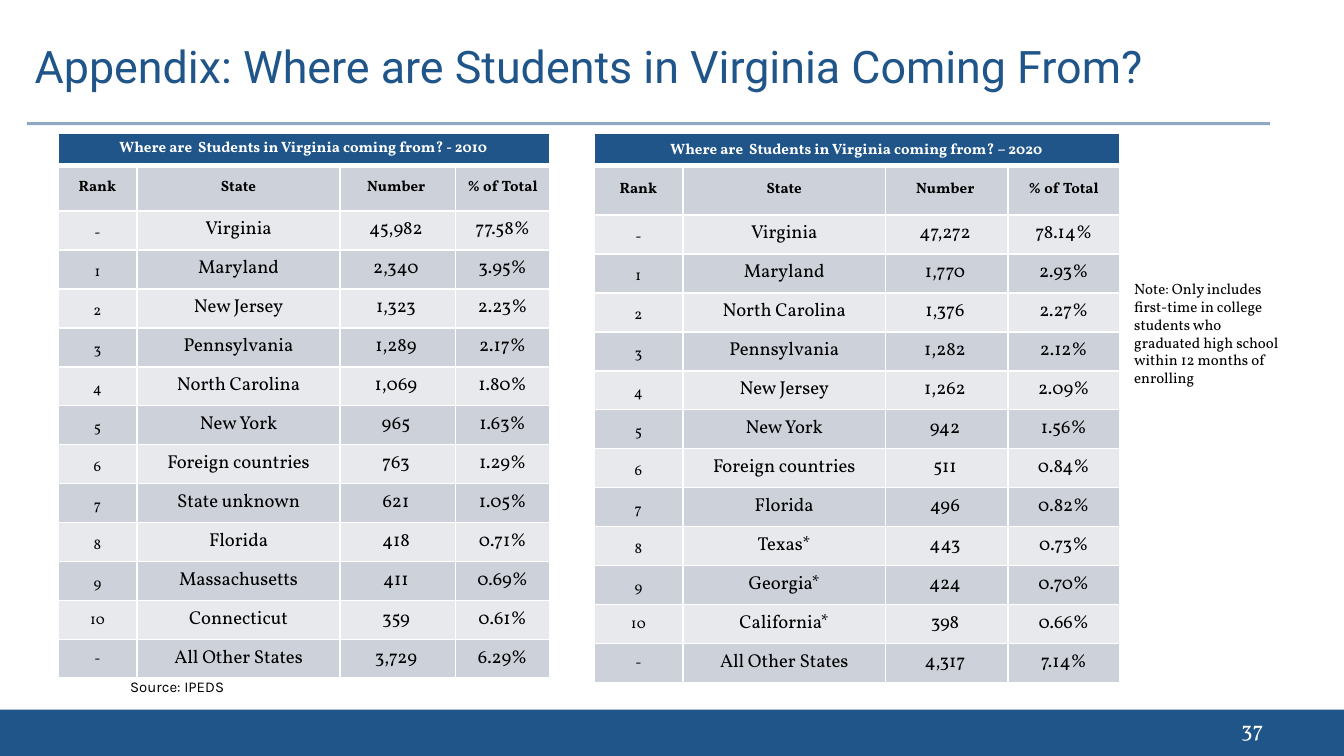
from lxml import etree
from pptx import Presentation
from pptx.dml.color import RGBColor
from pptx.enum.shapes import MSO_CONNECTOR, MSO_SHAPE
from pptx.enum.text import MSO_ANCHOR as ANCHOR, PP_ALIGN as ALIGN
from pptx.oxml.ns import qn
from pptx.util import Inches, Pt

NAVY = RGBColor(0x20, 0x55, 0x8A)
BAND_DARK = RGBColor(0xCD, 0xD1, 0xDA)
BAND_LIGHT = RGBColor(0xE8, 0xE9, 0xED)
WHITE = RGBColor(0xFF, 0xFF, 0xFF)
BLACK = RGBColor(0, 0, 0)
SERIF = "Vollkorn"

HEADERS = ["Rank", "State", "Number ", "% of Total"]
RANKS = ["-", *map(str, range(1, 11)), "-"]
STUDENTS_2010 = [
    ("Virginia", "45,982", "77.58%"),
    ("Maryland", "2,340", "3.95%"),
    ("New Jersey", "1,323", "2.23%"),
    ("Pennsylvania", "1,289", "2.17%"),
    ("North Carolina", "1,069", "1.80%"),
    ("New York", "965", "1.63%"),
    ("Foreign countries", "763", "1.29%"),
    ("State unknown", "621", "1.05%"),
    ("Florida", "418", "0.71%"),
    ("Massachusetts", "411", "0.69%"),
    ("Connecticut", "359", "0.61%"),
    ("All Other States", "3,729", "6.29%"),
]
STUDENTS_2020 = [
    ("Virginia", "47,272", "78.14%"),
    ("Maryland", "1,770", "2.93%"),
    ("North Carolina", "1,376", "2.27%"),
    ("Pennsylvania", "1,282", "2.12%"),
    ("New Jersey", "1,262", "2.09%"),
    ("New York", "942", "1.56%"),
    ("Foreign countries", "511", "0.84%"),
    ("Florida", "496", "0.82%"),
    ("Texas*", "443", "0.73%"),
    ("Georgia*", "424", "0.70%"),
    ("California*", "398", "0.66%"),
    ("All Other States", "4,317", "7.14%"),
]


def style(p, text, size, font=SERIF, color=BLACK, bold=False, align=ALIGN.LEFT):
    p.text = text
    p.alignment = align
    p.font.name, p.font.size, p.font.bold = font, Pt(size), bold
    p.font.color.rgb = color


def add_text(slide, box, text, size, anchor=ANCHOR.TOP, **look):
    tf = slide.shapes.add_textbox(*map(Inches, box)).text_frame
    tf.word_wrap = True
    tf.vertical_anchor = anchor
    style(tf.paragraphs[0], text, size, **look)
    return tf.paragraphs[0]


def add_rule(slide, left, right, y):
    """Draw the half-transparent line under the title."""
    line = slide.shapes.add_connector(
        MSO_CONNECTOR.STRAIGHT, *map(Inches, (left, y, right, y)))
    line.line.color.rgb = NAVY
    line.line.width = Pt(1.5)
    sp_pr = line._element.spPr
    color = sp_pr.find(".//" + qn("a:srgbClr"))
    etree.SubElement(color, qn("a:alpha"), val="50000")
    etree.SubElement(sp_pr, qn("a:effectLst"))


def add_footer(slide, left, top, width, height, number):
    sp = slide.shapes.add_shape(
        MSO_SHAPE.RECTANGLE, *map(Inches, (left, top, width, height)))
    sp.shadow.inherit = False
    sp.fill.solid()
    sp.fill.fore_color.rgb = NAVY
    sp.line.fill.background()
    add_text(slide, (left + 7.18, top - 0.01, 2.33, 0.3), number, 12,
             ANCHOR.MIDDLE, color=WHITE, align=ALIGN.RIGHT)


def set_borders(cell, top=1, bottom=1):
    """Give a cell white borders; call it before setting the fill."""
    tc_pr = cell._tc.get_or_add_tcPr()
    for side, width in (("L", 1), ("R", 1), ("T", top), ("B", bottom)):
        ln = etree.SubElement(tc_pr, qn(f"a:ln{side}"), w=str(Pt(width)))
        fill = etree.SubElement(ln, qn("a:solidFill"))
        etree.SubElement(fill, qn("a:srgbClr"), val=str(WHITE))


def fill_cell(cell, text, size, fill, margins, anchor=ANCHOR.MIDDLE, **look):
    """Margins are left and right, top, bottom."""
    side, top, bottom = map(Inches, margins)
    cell.margin_left = cell.margin_right = side
    cell.margin_top, cell.margin_bottom = top, bottom
    cell.vertical_anchor = anchor
    cell.fill.solid()
    cell.fill.fore_color.rgb = fill
    style(cell.text_frame.paragraphs[0], text, size, align=ALIGN.CENTER, **look)


def add_state_table(slide, left, top, widths, head_heights, heading,
                    heading_margins, students):
    heights = [*head_heights, *[0.29] * len(students)]
    table = slide.shapes.add_table(
        len(heights), len(widths), Inches(left), Inches(top),
        Inches(sum(widths)), Inches(sum(heights))).table
    for column, width in zip(table.columns, widths):
        column.width = Inches(width)
    for row, height in zip(table.rows, heights):
        row.height = Inches(height)
    for i, row in enumerate(table.rows):
        for cell in row.cells:
            set_borders(cell, top=3 if i == 1 else 1, bottom=3 if i == 0 else 1)

    table.cell(0, 0).merge(table.cell(0, len(widths) - 1))
    fill_cell(table.cell(0, 0), heading, 8, NAVY, heading_margins,
              ANCHOR.TOP, color=WHITE, bold=True)
    for j, header in enumerate(HEADERS):
        fill_cell(table.cell(1, j), header, 8, BAND_DARK, (0.07, 0.04, 0.04),
                  bold=True)
    for i, (rank, (state, number, share)) in enumerate(zip(RANKS, students)):
        band = BAND_DARK if i % 2 else BAND_LIGHT
        if i < 10:
            margins, anchor = (0.01, 0.01, 0.04), ANCHOR.BOTTOM
        else:
            margins, anchor = (0.01, 0.01, 0), ANCHOR.MIDDLE
        fill_cell(table.cell(i + 2, 0), rank, 8, band, margins, anchor)
        for j, text in enumerate((state, number + " ", share), 1):
            fill_cell(table.cell(i + 2, j), text, 10, band, (0.01, 0.01, 0.05),
                      ANCHOR.BOTTOM)


def main():
    prs = Presentation()
    prs.slide_width = Inches(10)
    prs.slide_height = prs.slide_width * 9 // 16
    slide = prs.slides.add_slide(prs.slide_layouts[6])

    add_footer(slide, -0.01, 5.28, 10.01, 0.35, "37")
    add_rule(slide, 0.2, 9.45, 0.92)
    add_text(slide, (0.16, 0.24, 9.07, 0.67),
             "Appendix: Where are Students in Virginia Coming From?", 24,
             font="Roboto", color=NAVY)
    source = add_text(slide, (0.75, 4.99, 1.21, 0.28), "Source: IPEDS", 8,
                      font="Karla")
    source._p.get_or_add_pPr().set("marL", str(Inches(0.12)))
    add_state_table(slide, 0.43, 0.99, (0.59, 1.51, 0.86, 0.7), (0.24, 0.34),
                    "Where are  Students in Virginia coming from? - 2010",
                    (0.08, 0.04, 0.04), STUDENTS_2010)
    add_state_table(slide, 4.42, 0.99, (0.66, 1.51, 0.91, 0.83), (0.24, 0.37),
                    "Where are  Students in Virginia coming from? – 2020",
                    (0.09, 0.05, 0.05), STUDENTS_2020)
    add_text(slide, (8.34, 2.03, 1.35, 1.21),
             "Note: Only includes first-time in college students who graduated "
             "high school within 12 months of enrolling", 8)
    prs.save("out.pptx")


if __name__ == "__main__":
    main()
